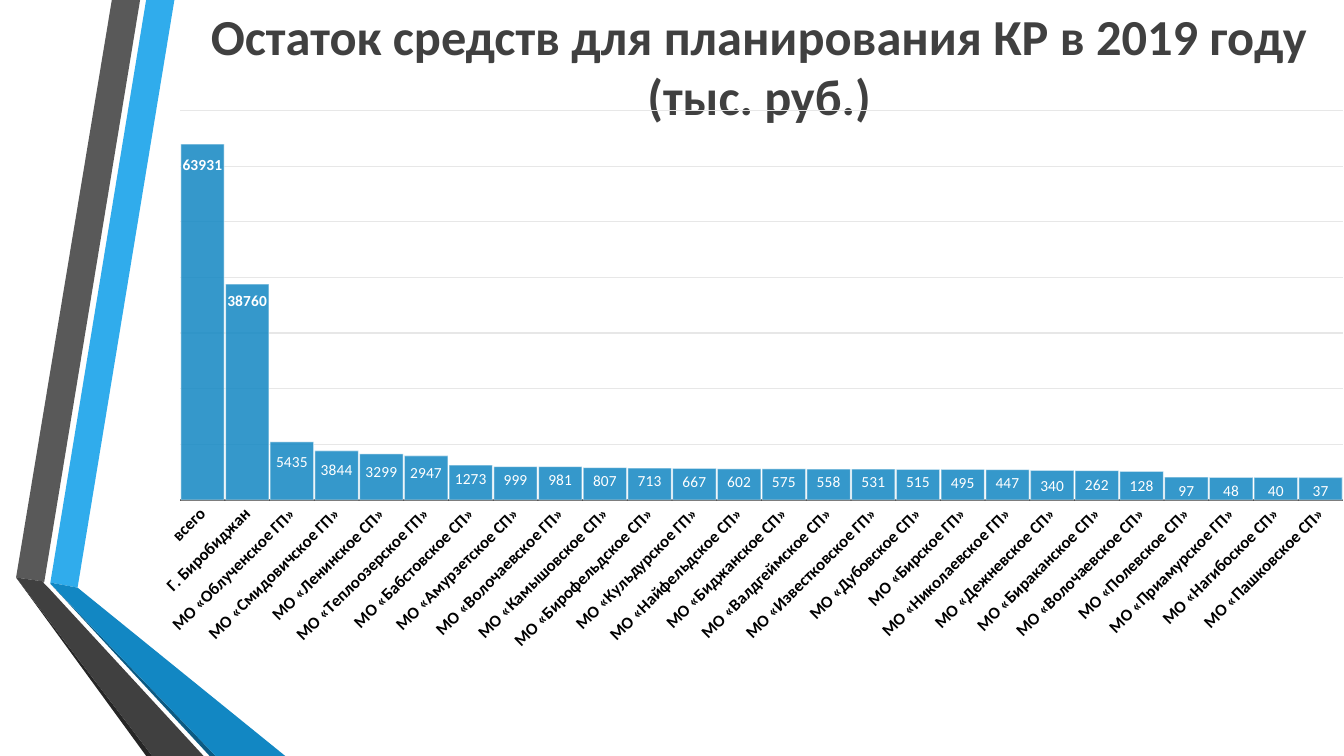
import pptx
import pptx.chart.data
import pptx.dml.color
import pptx.enum.chart
import pptx.enum.text
import pptx.oxml
import pptx.oxml.ns
import pptx.util
from pptx.util import Inches, Pt

COLORS = {
    "sky": "30ACEC", "blue": "1287C3", "navy": "0C5A82",
    "gray": "595959", "dark": "404040", "coal": "262626",
    "grid": "E7E7E7", "black": "000000", "white": "FFFFFF",
}

# Ribbon bands, back to front: colour and corner points in inches
BANDS = [
    ("sky", [(0.5, 5.78), (0.77, 5.83), (1.73, 0), (1.45, 0)]),
    ("gray", [(1.39, 0), (1.11, 0), (0.16, 5.73), (0.44, 5.77)]),
    ("coal", [(0.16, 5.73), (1.45, 7.5), (1.51, 7.5)]),
    ("navy", [(0.5, 5.79), (2.08, 7.5), (2.14, 7.5)]),
    ("blue", [(0.5, 5.79), (2.14, 7.5), (2.83, 7.5), (0.77, 5.83), (0.5, 5.78)]),
    ("dark", [(2.02, 7.5), (0.48, 5.83), (0.43, 5.78), (0.44, 5.77),
              (0.16, 5.73), (1.51, 7.5)]),
]

# Name, bar height, label text (None shows the value itself)
FUNDS = [
    ("всего", 63931, None),
    ("Г. Биробиджан", 38760, None),
    ("МО «Облученское ГП»", 10436, "5435"),
    ("МО «Смидовичское ГП»", 8844, "3844"),
    ("МО «Ленинское СП»", 8299, "3299"),
    ("МО «Теплоозерское ГП»", 7947, "2947"),
    ("МО «Бабстовское СП»", 6274, "1273"),
    ("МО «Амурзетское СП»", 5999, "999"),
    ("МО «Волочаевское ГП»", 5981, "981"),
    ("МО «Камышовское СП»", 5807, "807"),
    ("МО «Бирофельдское СП»", 5713, "713"),
    ("МО «Кульдурское ГП»", 5667, "667"),
    ("МО «Найфельдское СП»", 5602, "602"),
    ("МО «Биджанское СП»", 5575, "575"),
    ("МО «Валдгеймское СП»", 5558, "558"),
    ("МО «Известковское ГП»", 5531, "531"),
    ("МО «Дубовское СП»", 5515, "515"),
    ("МО «Бирское ГП»", 5495, "495"),
    ("МО «Николаевское ГП»", 5446, "447"),
    ("МО «Дежневское СП»", 5340, "340"),
    ("МО «Бираканское СП»", 5262, "262"),
    ("МО «Волочаевское СП»", 5128, "128"),
    ("МО «Полевское СП»", 4096, "97"),
    ("МО «Приамурское ГП»", 4048, "48"),
    ("МО «Нагибоское СП»", 4040, "40"),
    ("МО «Пашковское СП»", 4037, "37"),
]

# Labels moved down from the bar end: bar index and inches
DROPS = {0: 0.08, 1: 0.04, 2: 0.07, 3: 0.06, 4: 0.05, 5: 0.04,
         6: 0.01, 19: 0.03, 20: 0.01, 21: 0.01, 22: 0.01}


class Deck:
    """Holds the style and the current slide."""

    def __init__(self, face):
        self.face = face
        self.show = pptx.Presentation()
        self.show.slide_width = Inches(13.33)
        self.show.slide_height = Inches(7.5)
        self.slide = self.show.slides.add_slide(self.show.slide_layouts[5])

    def color(self, name):
        return pptx.dml.color.RGBColor.from_string(COLORS[name])

    def font(self, font, size, name, bold=False):
        font.name, font.size, font.bold = self.face, Pt(size), bold
        font.color.rgb = self.color(name)

    def fill(self, fill, name, alpha=100):
        fill.solid()
        fill.fore_color.rgb = self.color(name)
        if alpha < 100:
            tone = fill._xPr.find(".//" + pptx.oxml.ns.qn("a:srgbClr"))
            tone.append(pptx.oxml.parse_xml(
                f'<a:alpha {pptx.oxml.ns.nsdecls("a")} val="{alpha * 1000}"/>'))

    def line(self, line, width, name, alpha=100):
        line.width = Pt(width)
        self.fill(line.fill, name, alpha)

    def title(self, text, box):
        shape = self.slide.shapes.title
        shape.left, shape.top, shape.width, shape.height = map(Inches, box)
        frame = shape.text_frame
        frame.text = text
        frame.word_wrap = True
        frame.auto_size = pptx.enum.text.MSO_AUTO_SIZE.NONE
        frame.vertical_anchor = pptx.enum.text.MSO_ANCHOR.MIDDLE
        para = frame.paragraphs[0]
        para.alignment = pptx.enum.text.PP_ALIGN.CENTER
        self.font(para.font, 36, "dark", True)

    def band(self, name, spots):
        first, *rest = [(Inches(x), Inches(y)) for x, y in spots]
        pen = self.slide.shapes.build_freeform(*first)
        pen.add_line_segments(rest, close=True)
        shape = pen.convert_to_shape()
        shape.shadow.inherit = False
        self.fill(shape.fill, name)
        shape.line.fill.background()

    def chart(self, rows, box, plot):
        data = pptx.chart.data.CategoryChartData(number_format="0")
        data.categories = [row[0] for row in rows]
        data.add_series("Series 1", [row[1] for row in rows])
        kind = pptx.enum.chart.XL_CHART_TYPE.COLUMN_CLUSTERED
        chart = self.slide.shapes.add_chart(kind, *map(Inches, box), data).chart
        chart.has_legend = chart.has_title = False
        self.font(chart.font, 10, "black")
        self.axes(chart)
        self.bars(chart.plots[0], [row[2] for row in rows], box[3])
        area = chart._chartSpace.find(".//" + pptx.oxml.ns.qn("c:plotArea"))
        for old in area.findall(pptx.oxml.ns.qn("c:layout")):
            area.remove(old)
        modes = '<c:xMode val="edge"/><c:yMode val="edge"/>'
        area.insert(0, self.place(plot, '<c:layoutTarget val="inner"/>' + modes))

    def place(self, sides, head=""):
        marks = "".join(f'<c:{k} val="{v}"/>' for k, v in zip("xywh", sides))
        return pptx.oxml.parse_xml(
            f'<c:layout {pptx.oxml.ns.nsdecls("c")}><c:manualLayout>'
            f'{head}{marks}</c:manualLayout></c:layout>')

    def axes(self, chart):
        base = chart.category_axis
        base.major_tick_mark = pptx.enum.chart.XL_TICK_MARK.NONE
        self.line(base.format.line, 1.5, "dark")
        self.font(base.tick_labels.font, 12, "black", True)
        # Slanted names
        body = base._element.find(".//" + pptx.oxml.ns.qn("a:bodyPr"))
        body.set("rot", "-2700000")
        body.set("vert", "horz")
        side = chart.value_axis
        side.minimum_scale, side.maximum_scale = 0, 70000
        side.major_unit = 10000
        side.visible = False
        self.line(side.major_gridlines.format.line, 0.75, "grid")

    def bars(self, plot, texts, height):
        plot.gap_width = 3
        plot.vary_by_categories = False
        bars = plot.series[0]
        self.fill(bars.format.fill, "blue", 85)
        self.line(bars.format.line, 0.75, "white", 50)
        spot = pptx.enum.chart.XL_LABEL_POSITION.INSIDE_END
        tags = bars.data_labels
        tags.show_value = True
        tags.position = spot
        tags.number_format, tags.number_format_is_linked = "0", False
        self.font(tags.font, 11, "white", True)
        for i, text in enumerate(texts):
            tag = bars.points[i].data_label
            if text:
                tag.text_frame.text = text
                self.font(tag.text_frame.paragraphs[0].runs[0].font, 11, "white")
            else:
                self.font(tag.font, 11, "white", True)
            tag.position = spot
            if i in DROPS:
                mark = tag._dLbl.find(pptx.oxml.ns.qn("c:idx"))
                mark.addnext(self.place((0, round(DROPS[i] / height, 4))))


def main():
    deck = Deck("Calibri")
    # Ribbon at the left
    for name, spots in BANDS:
        deck.band(name, spots)
    # Heading and chart
    deck.title("Остаток средств для планирования КР в 2019 году (тыс. руб.)",
               (1.73, 0, 11.6, 1.3))
    deck.chart(FUNDS, (1.43, 1.09, 11.9, 5.69), (0.03, 0, 0.97, 0.68))
    deck.show.save("out.pptx")


if __name__ == "__main__":
    main()
